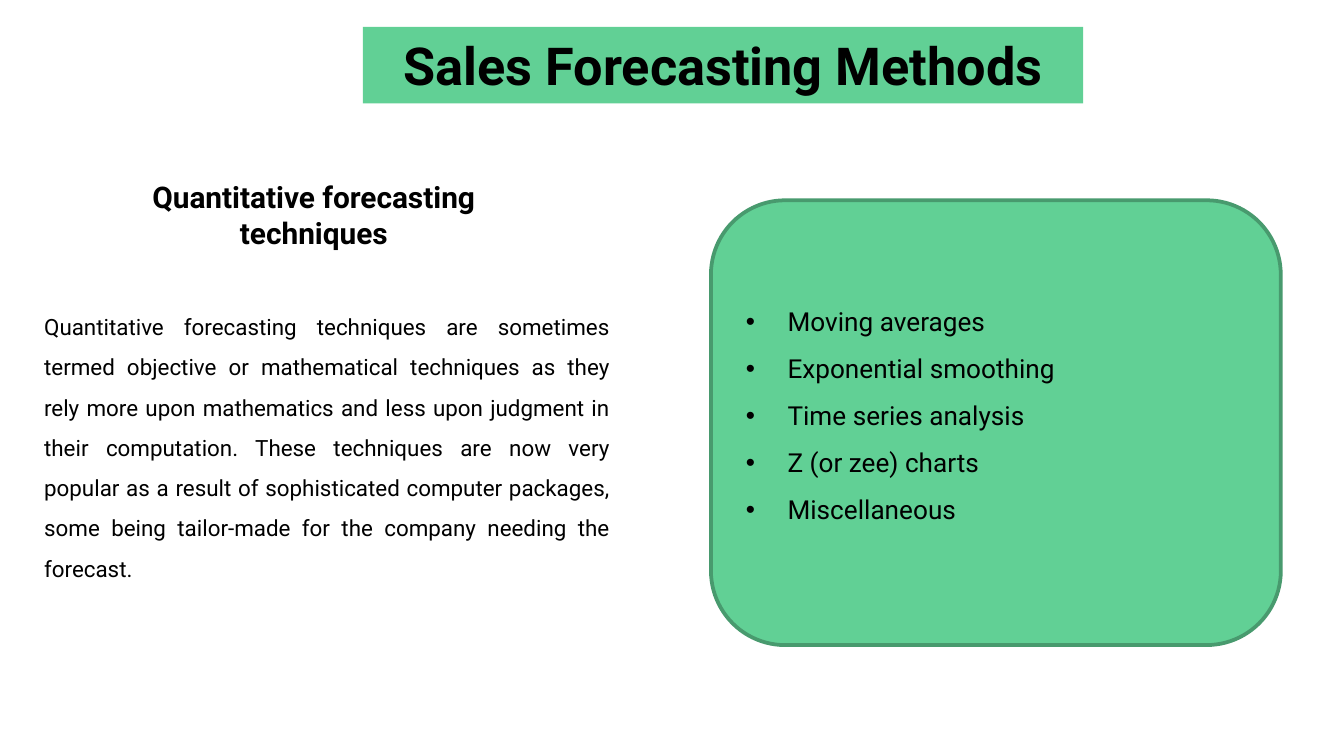
from dataclasses import dataclass
from typing import Any

import lxml.etree
import pptx
import pptx.dml.color
import pptx.enum.shapes
import pptx.enum.text
import pptx.oxml.ns
import pptx.util

Inches = pptx.util.Inches
Pt = pptx.util.Pt
RGBColor = pptx.dml.color.RGBColor
Align = pptx.enum.text.PP_ALIGN
Anchor = pptx.enum.text.MSO_ANCHOR

GREEN = RGBColor(0x61, 0xD0, 0x95)
DARK_GREEN = RGBColor(0x48, 0x9A, 0x6E)
BLACK = RGBColor(0x00, 0x00, 0x00)
FONT = "Roboto"
BULLET_INDENT = Inches(0.31)
SLIDE_WIDTH = Inches(10)
SLIDE_HEIGHT = SLIDE_WIDTH * 9 // 16

METHODS = [
    "Moving averages",
    "Exponential smoothing",
    "Time series analysis",
    "Z (or zee) charts",
    "Miscellaneous",
]
EXPLANATION = (
    "Quantitative forecasting techniques are sometimes termed objective or "
    "mathematical techniques as they rely more upon mathematics and less upon "
    "judgment in their computation. These techniques are now very popular as a "
    "result of sophisticated computer packages, some being tailor-made for the "
    "company needing the forecast."
)


@dataclass(frozen=True)
class Place:
    left: float
    top: float
    width: float
    height: float

    def lengths(self) -> tuple:
        return tuple(map(Inches, (self.left, self.top, self.width, self.height)))


@dataclass(frozen=True)
class TextStyle:
    size: int
    align: Any
    bold: bool = False
    line_spacing: float = 1.0
    anchor: Any = Anchor.TOP
    bottom_margin: float = 0.05
    bulleted: bool = False


@dataclass(frozen=True)
class TextBlock:
    place: Place
    text: str
    style: TextStyle


TITLE = TextBlock(
    Place(2.7, 0.2, 5.36, 0.57),
    "Sales Forecasting Methods",
    TextStyle(28, Align.CENTER, bold=True),
)
TEXT_BLOCKS = [
    TextBlock(
        Place(0.59, 1.28, 3.49, 0.64),
        "Quantitative forecasting techniques",
        TextStyle(16, Align.CENTER, bold=True),
    ),
    TextBlock(
        Place(0.23, 2.18, 4.41, 2.22),
        EXPLANATION,
        TextStyle(12, Align.JUSTIFY, line_spacing=1.5),
    ),
]
METHODS_PLACE = Place(5.29, 1.49, 4.24, 3.31)
METHODS_STYLE = TextStyle(14, Align.LEFT, line_spacing=1.5, anchor=Anchor.MIDDLE,
                          bottom_margin=0.28, bulleted=True)


def set_attributes(target: Any, values: dict) -> None:
    for name, value in values.items():
        setattr(target, name, value)


def add_bullet(para: Any) -> None:
    qn = pptx.oxml.ns.qn
    properties = para._p.get_or_add_pPr()
    properties.set("marL", str(BULLET_INDENT))
    properties.set("indent", str(-BULLET_INDENT))
    color = lxml.etree.SubElement(properties, qn("a:buClr"))
    lxml.etree.SubElement(color, qn("a:srgbClr"), val=str(BLACK))
    lxml.etree.SubElement(properties, qn("a:buFont"), typeface="Arial")
    lxml.etree.SubElement(properties, qn("a:buChar"), char="•")


def write_text(box: Any, lines: list[str], style: TextStyle) -> None:
    frame = box.text_frame
    set_attributes(frame, {
        "word_wrap": True,
        "auto_size": pptx.enum.text.MSO_AUTO_SIZE.NONE,
        "vertical_anchor": style.anchor,
        "margin_bottom": Inches(style.bottom_margin),
    })
    for index, line in enumerate(lines):
        para = frame.add_paragraph() if index else frame.paragraphs[0]
        if style.bulleted:
            add_bullet(para)
        set_attributes(para, {
            "alignment": style.align,
            "line_spacing": style.line_spacing,
            "space_before": Pt(0),
        })
        span = para.add_run()
        span.text = line
        set_attributes(span.font, {
            "name": FONT, "size": Pt(style.size), "bold": style.bold,
        })
        span.font.color.rgb = BLACK


def fill_green(shape: Any) -> None:
    shape.fill.solid()
    shape.fill.fore_color.rgb = GREEN


def add_title(page: Any, block: TextBlock) -> None:
    title = page.shapes.title
    names = ("left", "top", "width", "height")
    set_attributes(title, dict(zip(names, block.place.lengths())))
    fill_green(title)
    write_text(title, [block.text], block.style)


def add_text_block(page: Any, block: TextBlock) -> None:
    box = page.shapes.add_textbox(*block.place.lengths())
    write_text(box, [block.text], block.style)


def add_methods_panel(page: Any) -> None:
    panel = page.shapes.add_shape(
        pptx.enum.shapes.MSO_SHAPE.ROUNDED_RECTANGLE, *METHODS_PLACE.lengths())
    panel.shadow.inherit = False
    fill_green(panel)
    panel.line.color.rgb = DARK_GREEN
    panel.line.width = Pt(2)
    write_text(panel, METHODS, METHODS_STYLE)


def main() -> None:
    deck = pptx.Presentation()
    deck.slide_width = SLIDE_WIDTH
    deck.slide_height = SLIDE_HEIGHT
    page = deck.slides.add_slide(deck.slide_layouts.get_by_name("Title Only"))
    add_title(page, TITLE)
    for block in TEXT_BLOCKS:
        add_text_block(page, block)
    add_methods_panel(page)
    deck.save("out.pptx")


if __name__ == "__main__":
    main()
